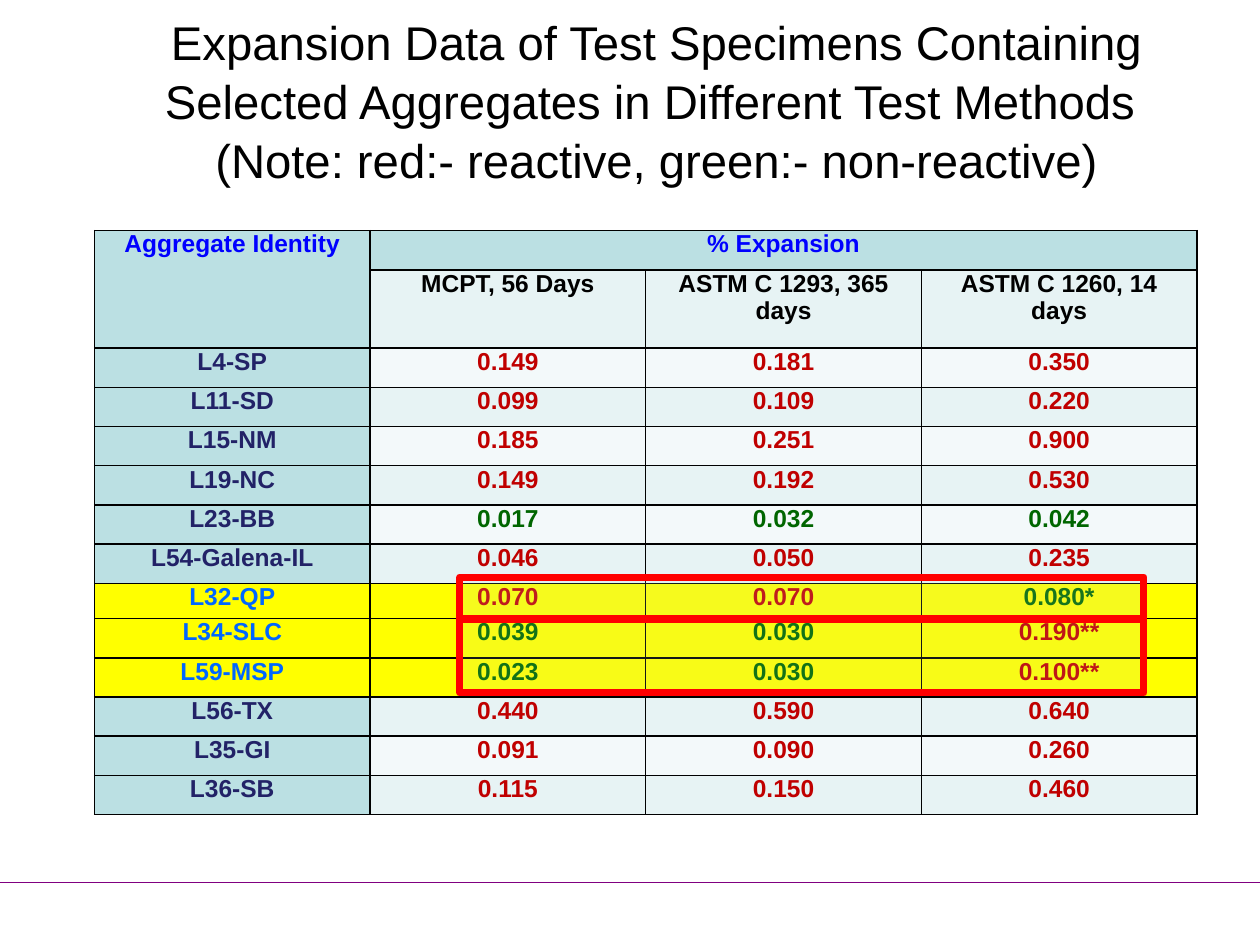
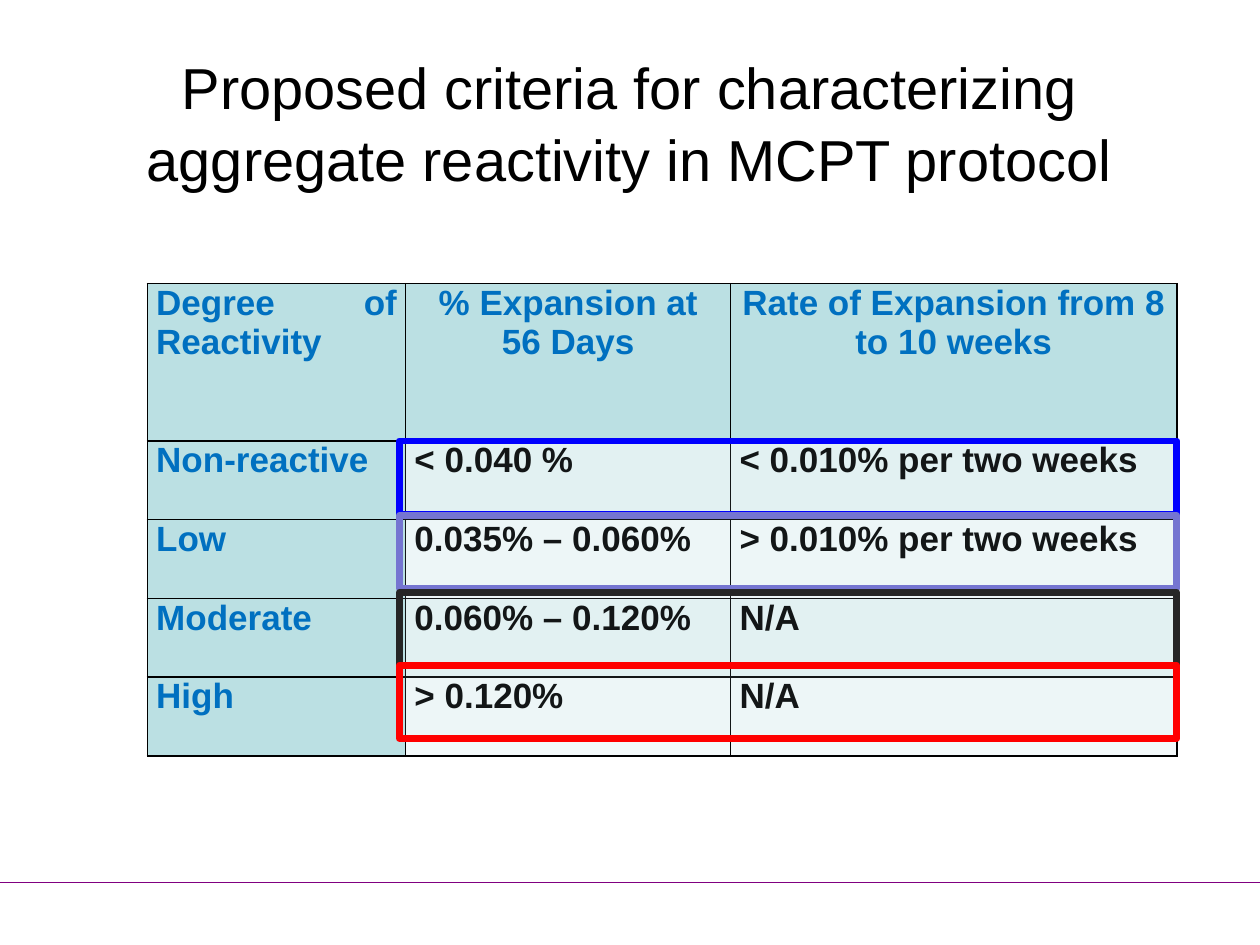
from lxml import etree
from pptx import Presentation
from pptx.dml.color import RGBColor
from pptx.enum.shapes import MSO_CONNECTOR, MSO_SHAPE
from pptx.enum.text import MSO_ANCHOR, MSO_AUTO_SIZE, PP_ALIGN
from pptx.oxml import parse_xml
from pptx.oxml.ns import nsdecls, qn
from pptx.util import Inches, Pt

CENTER, JUSTIFY = PP_ALIGN.CENTER, PP_ALIGN.JUSTIFY
MIDDLE, NO_FIT = MSO_ANCHOR.MIDDLE, MSO_AUTO_SIZE.NONE
RECTANGLE, STRAIGHT = MSO_SHAPE.RECTANGLE, MSO_CONNECTOR.STRAIGHT

WIDTH, HEIGHT = 10, 7.5
FONT = "Arial"
TITLE_ONLY = 5
BLACK, RED, GREEN = "000000", "C00000", "006600"
FRAME_RED, HEADER_BLUE, LABEL_NAVY = "FF0000", "0000FF", "222267"
LABEL_BRIGHT, CRITERIA_BLUE = "0066FF", "0070C0"
TEAL, YELLOW, RULE_PURPLE = "BBE0E3", "FFFF00", "800080"
BANDS = ("F3F9FA", "E7F3F4")

EXPANSION = [
    ("Aggregate Identity", "% Expansion", "", ""),
    ("", "MCPT, 56 Days", "ASTM C 1293, 365 days", "ASTM C 1260, 14 days"),
    ("L4-SP", "0.149", "0.181", "0.350"),
    ("L11-SD", "0.099", "0.109", "0.220"),
    ("L15-NM", "0.185", "0.251", "0.900"),
    ("L19-NC", "0.149", "0.192", "0.530"),
    ("L23-BB", "0.017", "0.032", "0.042"),
    ("L54-Galena-IL", "0.046", "0.050", "0.235"),
    ("L32-QP", "0.070", "0.070", "0.080*"),
    ("L34-SLC", "0.039", "0.030", "0.190**"),
    ("L59-MSP", "0.023", "0.030", "0.100**"),
    ("L56-TX", "0.440", "0.590", "0.640"),
    ("L35-GI", "0.091", "0.090", "0.260"),
    ("L36-SB", "0.115", "0.150", "0.460"),
]
REACTIVE_FROM = (0.04, 0.04, 0.10)
HIGHLIGHTED = ("L32-QP", "L34-SLC", "L59-MSP")

CRITERIA = [
    ("Degree of Reactivity", "% Expansion at 56 Days", "Rate of Expansion from 8 to 10 weeks"),
    ("Non-reactive", "< 0.040 %", "< 0.010% per two weeks"),
    ("Low", "0.035% – 0.060%", "> 0.010% per two weeks"),
    ("Moderate", "0.060% – 0.120%", "N/A"),
    ("High", "> 0.120%", "N/A"),
]


def rgb(color):
    return RGBColor.from_string(color)


def format_paragraph(para, size, color, align=CENTER, bold=False):
    para.alignment = align
    for name, value in {"name": FONT, "size": Pt(size), "bold": bold}.items():
        setattr(para.font, name, value)
    para.font.color.rgb = rgb(color)


def place(shape, left, top, width, height):
    for name, value in zip(("left", "top", "width", "height"), (left, top, width, height)):
        setattr(shape, name, Inches(value))


def add_titled_slide(deck, text, bounds, size):
    slide = deck.slides.add_slide(deck.slide_layouts[TITLE_ONLY])
    title = slide.shapes.title
    place(title, *bounds)
    frame = title.text_frame
    for name, value in {"text": text, "vertical_anchor": MIDDLE, "auto_size": NO_FIT}.items():
        setattr(frame, name, value)
    para = frame.paragraphs[0]
    para.line_spacing = 1.04
    format_paragraph(para, size, BLACK)
    return slide


def add_footer_rule(deck, slide):
    """Draw the rule and move it to the shared layout."""
    y = Inches(7)
    rule = slide.shapes.add_connector(STRAIGHT, 0, y, Inches(WIDTH), y)
    rule.line.width = Pt(0.25)
    rule.line.color.rgb = rgb(RULE_PURPLE)
    etree.SubElement(rule.element.spPr, qn("a:effectLst"))
    deck.slide_layouts[TITLE_ONLY].shapes.element.append(rule.element)


def add_borders(cell):
    properties = cell._tc.get_or_add_tcPr()
    for side in ("lnL", "lnR", "lnT", "lnB"):
        properties.append(parse_xml(
            f'<a:{side} {nsdecls("a")} w="{Pt(1)}"><a:solidFill>'
            f'<a:srgbClr val="{BLACK}"/></a:solidFill></a:{side}>'))


def add_grid(slide, rows, bounds, column_shares, row_shares, size, style):
    """Add a bordered table; style(row, column, text) gives fill, colour, alignment."""
    left, top, width, height = bounds
    table = slide.shapes.add_table(len(rows), len(rows[0]), *map(Inches, bounds)).table
    table.first_row = table.horz_banding = False
    for column, share in zip(table.columns, column_shares):
        column.width = Inches(width * share / sum(column_shares))
    for row, share in zip(table.rows, row_shares):
        row.height = Inches(height * share / sum(row_shares))
    margins = {"margin_left": Inches(0.07), "margin_right": Inches(0.07),
               "margin_top": 0, "margin_bottom": 0}
    for r, texts in enumerate(rows):
        for c, text in enumerate(texts):
            cell = table.cell(r, c)
            fill, color, align = style(r, c, text)
            for name, value in margins.items():
                setattr(cell, name, value)
            add_borders(cell)
            cell.fill.solid()
            cell.fill.fore_color.rgb = rgb(fill)
            cell.text = text
            format_paragraph(cell.text_frame.paragraphs[0], size, color, align, bold=True)
    return table


def add_frame(slide, bounds, color, opacity=10):
    frame = slide.shapes.add_shape(RECTANGLE, *map(Inches, bounds))
    frame.shadow.inherit = False
    frame.fill.solid()
    frame.fill.fore_color.rgb = rgb(TEAL)
    tint = frame.element.spPr.find(qn("a:solidFill"))[0]
    etree.SubElement(tint, qn("a:alpha"), val=str(opacity * 1000))
    frame.line.width = Pt(4)
    frame.line.color.rgb = rgb(color)


def band_fill(row, column):
    return TEAL if row == 0 or column == 0 else BANDS[row % 2]


def expansion_style(row, column, text):
    highlighted = EXPANSION[row][0] in HIGHLIGHTED
    if row == 0:
        color = HEADER_BLUE
    elif column == 0:
        color = LABEL_BRIGHT if highlighted else LABEL_NAVY
    elif row == 1:
        color = BLACK
    else:
        reactive = float(text.strip("*")) >= REACTIVE_FROM[column - 1]
        color = RED if reactive else GREEN
    return YELLOW if highlighted else band_fill(row, column), color, CENTER


def criteria_style(row, column, text):
    color = CRITERIA_BLUE if row == 0 or column == 0 else BLACK
    align = CENTER if row == 0 and column > 0 else JUSTIFY
    return band_fill(row, column), color, align


def build_expansion_slide(deck):
    slide = add_titled_slide(
        deck,
        "Expansion Data of Test Specimens Containing Selected Aggregates "
        "in Different Test Methods \v(Note: red:- reactive, green:- non-reactive)",
        (0.5, 0.08, 9.42, 1.42), 27)
    row_shares = [1, 2] + [1] * 6 + [0.9] + [1] * 5
    table = add_grid(slide, EXPANSION, (0.75, 1.83, 8.75, 4.64), [1] * 4,
                     row_shares, 14, expansion_style)
    table.cell(0, 0).merge(table.cell(1, 0))
    table.cell(0, 1).merge(table.cell(0, 3))
    add_frame(slide, (3.65, 4.58, 5.43, 0.33), FRAME_RED, opacity=13)
    add_frame(slide, (3.65, 4.92, 5.43, 0.58), FRAME_RED)
    return slide


def build_criteria_slide(deck):
    slide = add_titled_slide(
        deck, "Proposed criteria for characterizing aggregate reactivity in MCPT protocol",
        (0.58, 0.25, 8.83, 1.42), 33)
    add_grid(slide, CRITERIA, (1.17, 2.25, 8.17, 3.75), [2.05, 2.58, 3.54],
             [2, 1, 1, 1, 1], 20, criteria_style)
    frame_tops = {"0000FF": 3.5, "7575D1": 4.09, "262626": 4.7, FRAME_RED: 5.28}
    for color, top in frame_tops.items():
        add_frame(slide, (3.17, top, 6.17, 0.58), color)


def main():
    deck = Presentation()
    deck.slide_width, deck.slide_height = Inches(WIDTH), Inches(HEIGHT)
    add_footer_rule(deck, build_expansion_slide(deck))
    build_criteria_slide(deck)
    deck.save("out.pptx")


if __name__ == "__main__":
    main()
